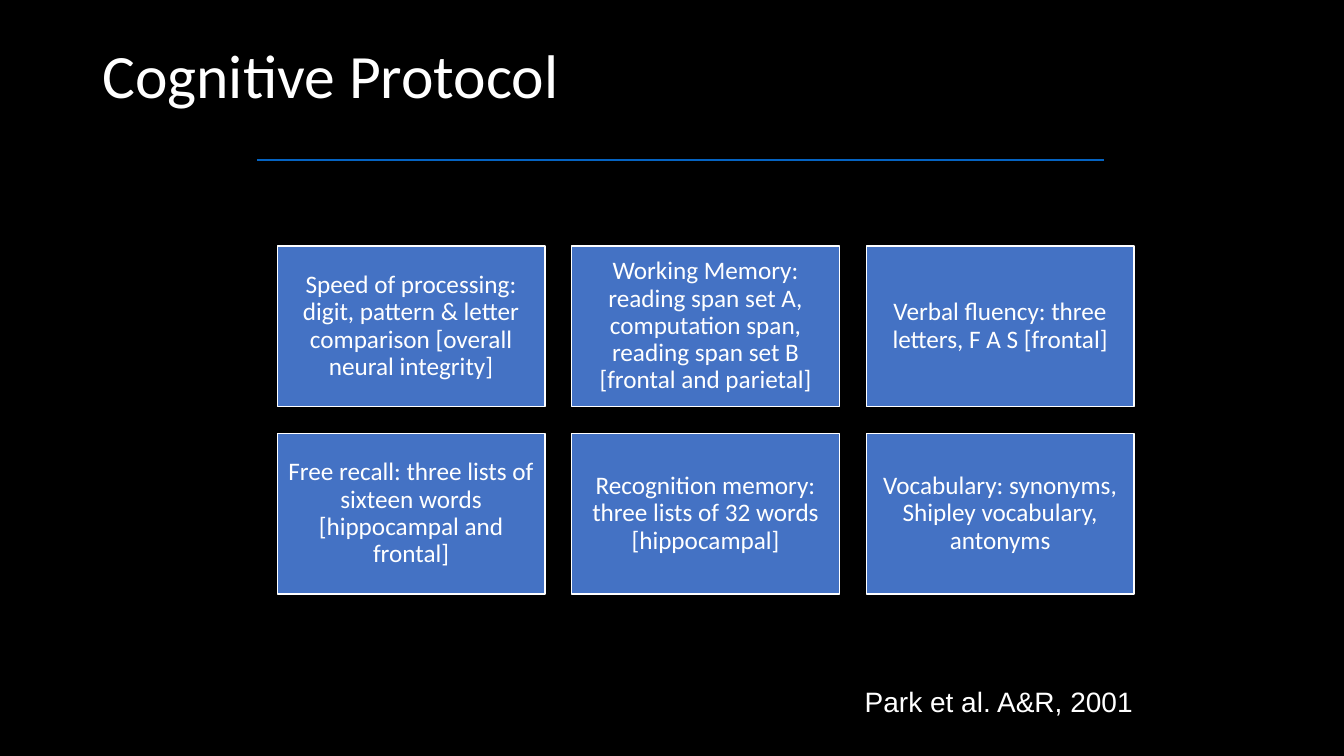
from lxml import etree
from pptx import Presentation
from pptx.dml.color import RGBColor
from pptx.enum.shapes import MSO_CONNECTOR, MSO_SHAPE
from pptx.enum.text import MSO_ANCHOR, PP_ALIGN
from pptx.oxml.ns import qn
from pptx.util import Pt

RECTANGLE = MSO_SHAPE.RECTANGLE
STRAIGHT = MSO_CONNECTOR.STRAIGHT
TOP, MIDDLE = MSO_ANCHOR.TOP, MSO_ANCHOR.MIDDLE
LEFT, CENTER = PP_ALIGN.LEFT, PP_ALIGN.CENTER

BLACK, WHITE, BLUE, RULE_BLUE = "000000", "FFFFFF", "4472C4", "0563C1"
COLUMNS, GAP = 3, 19.1
TESTS = [
    "Speed of processing: digit, pattern & letter comparison [overall neural integrity]",
    "Working Memory: reading span set A, computation span, reading span set B [frontal and parietal]",
    "Verbal fluency: three letters, F A S [frontal]",
    "Free recall: three lists of sixteen words [hippocampal and frontal]",
    "Recognition memory: three lists of 32 words [hippocampal]",
    "Vocabulary: synonyms, Shipley vocabulary, antonyms",
]


def color(value):
    """Turn a hex string into a colour."""
    return RGBColor.from_string(value)


def write(shape, text, size, font, frame_format, para_format):
    """Write one white paragraph into a shape."""
    frame = shape.text_frame
    para = frame.paragraphs[0]
    span = para.add_run()
    span.text = text
    span.font.color.rgb = color(WHITE)
    formats = (
        (frame, {"word_wrap": True, **frame_format}),
        (para, para_format),
        (span.font, {"size": Pt(size), "name": font}),
    )
    for target, values in formats:
        for name, value in values.items():
            setattr(target, name, value)


def add_label(page, box, text, size, font, line_spacing=1.0):
    """Add left-aligned text at the top of the box."""
    label = page.shapes.add_textbox(*map(Pt, box))
    write(label, text, size, font, {"vertical_anchor": TOP},
          {"alignment": LEFT, "line_spacing": line_spacing})


def add_rule(page, box):
    """Draw a thin line across the box."""
    left, top, width, height = box
    rule = page.shapes.add_connector(
        STRAIGHT, Pt(left), Pt(top), Pt(left + width), Pt(top + height))
    rule.line.color.rgb = color(RULE_BLUE)
    rule.line.width = Pt(1)
    etree.SubElement(rule._element.spPr, qn("a:effectLst"))


def add_test_grid(page, box, tests):
    """Fill the box with an even grid of test cards."""
    left, top, width, height = box
    rows = -(-len(tests) // COLUMNS)
    card_width = (width - GAP * (COLUMNS - 1)) / COLUMNS
    card_height = (height - GAP * (rows - 1)) / rows
    margins = {f"margin_{side}": Pt(5) for side in ("left", "right", "top", "bottom")}
    for index, text in enumerate(tests):
        row, column = divmod(index, COLUMNS)
        card = page.shapes.add_shape(
            RECTANGLE,
            Pt(left + column * (card_width + GAP)),
            Pt(top + row * (card_height + GAP)),
            Pt(card_width), Pt(card_height))
        card.shadow.inherit = False
        card.fill.solid()
        card.fill.fore_color.rgb = color(BLUE)
        card.line.color.rgb = color(WHITE)
        card.line.width = Pt(1)
        write(card, text, 18, "Calibri", {"vertical_anchor": MIDDLE, **margins},
              {"alignment": CENTER, "line_spacing": 0.9})


def build_protocol_slide(deck):
    """Build the slide of cognitive tests."""
    page = deck.slides.add_slide(deck.slide_layouts[6])
    page.background.fill.solid()
    page.background.fill.fore_color.rgb = color(BLACK)
    add_label(page, (66, 28.8, 828, 104.4), "Cognitive Protocol", 44, "Calibri", 0.9)
    add_test_grid(page, (198, 175.7, 612, 248.6), TESTS)
    add_rule(page, (183.6, 114.2, 604.8, 0))
    add_label(page, (610.6, 485.3, 206.6, 31), "Park et al. A&R, 2001", 20, "Arial")


def main():
    """Create and save the deck."""
    deck = Presentation()
    deck.slide_width, deck.slide_height = Pt(960), Pt(540)
    build_protocol_slide(deck)
    deck.save("out.pptx")


if __name__ == "__main__":
    main()
